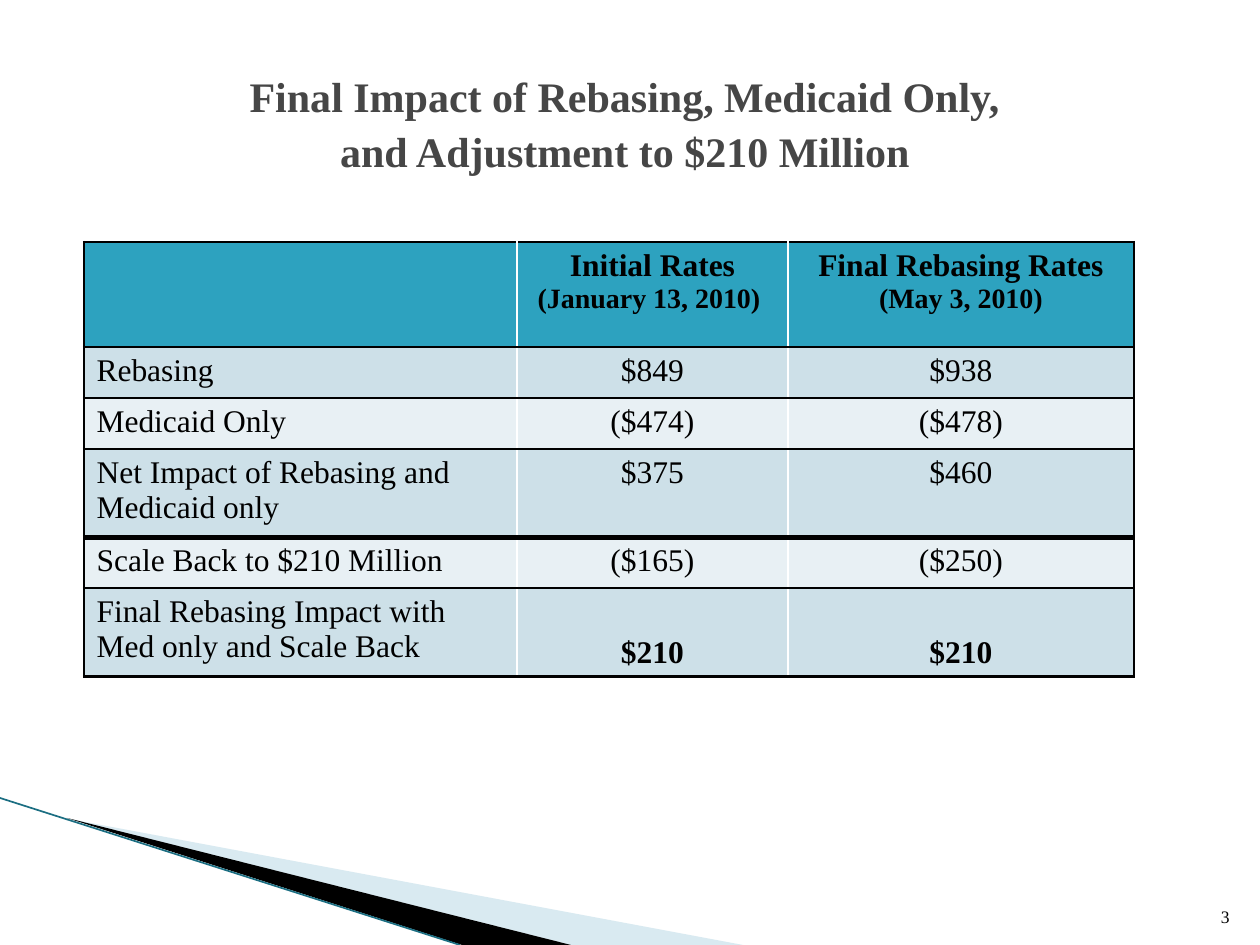
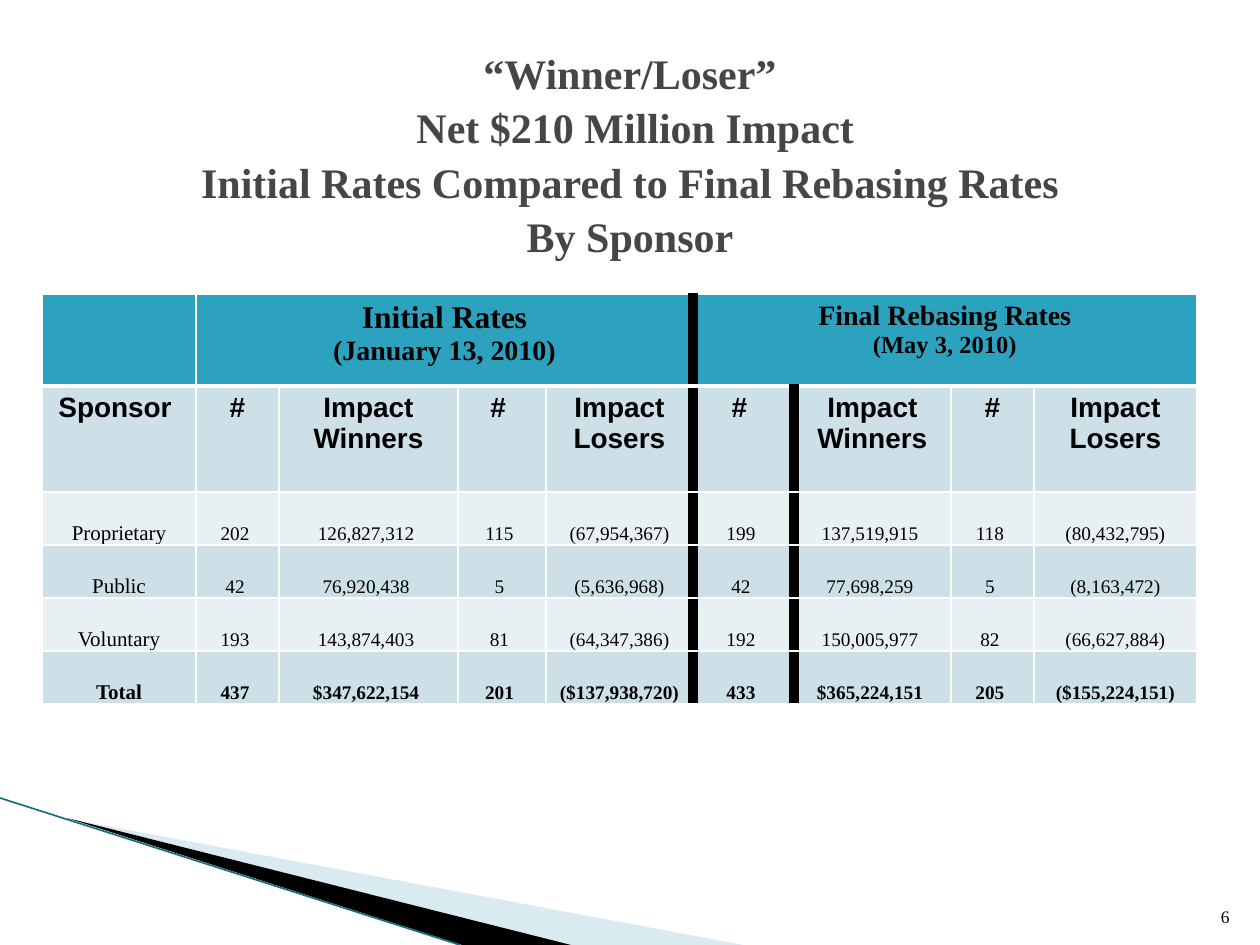
from dataclasses import dataclass

from lxml.etree import SubElement
from pptx import Presentation
from pptx.dml.color import RGBColor
from pptx.enum.shapes import MSO_CONNECTOR
from pptx.enum.text import MSO_ANCHOR, MSO_AUTO_SIZE, PP_ALIGN
from pptx.oxml.ns import qn
from pptx.util import Emu, Pt

EMU_PER_PX = 914400 / 126


@dataclass(frozen=True)
class Theme:
    """Colours, fonts and type sizes of the deck."""
    black: str = "000000"
    white: str = "FFFFFF"
    title: str = "464646"
    header: str = "2DA2BF"
    band_dark: str = "CDE0E8"
    band_light: str = "E8F0F4"
    wedge: str = "A0CBDC"
    edge: str = "1B6E82"
    serif: str = "Times New Roman"
    sans: str = "Arial"
    title_size: int = 24
    large: int = 18
    medium: int = 16
    small: int = 14
    label: int = 12
    figure: int = 11
    footer: int = 10


@dataclass(frozen=True)
class Box:
    """A region in px."""
    left: int
    top: int
    width: int
    height: int

    def emu(self):
        """Return the region as lengths for python-pptx."""
        return [px(n) for n in (self.left, self.top, self.width, self.height)]


THEME = Theme()
PAGE = Box(0, 0, 1260, 945)


def px(count):
    """Turn px into EMU."""
    return Emu(round(count * EMU_PER_PX))


def rgb(code):
    """Turn a hex code into a colour."""
    return RGBColor.from_string(code)


def add_span(para, text, size, bold=False, color=THEME.black, font=THEME.serif):
    """Add one formatted run to a paragraph."""
    span = para.add_run()
    span.text = text
    span.font.name = font
    span.font.size = Pt(size)
    span.font.bold = bold
    span.font.color.rgb = rgb(color)


def add_wedge(page, points, color, alpha=None):
    """Draw a filled outline through the given px points."""
    builder = page.shapes.build_freeform(*points[0], scale=EMU_PER_PX)
    builder.add_line_segments(points[1:], close=True)
    wedge = builder.convert_to_shape()
    wedge.shadow.inherit = False
    wedge.line.fill.background()
    wedge.fill.solid()
    wedge.fill.fore_color.rgb = rgb(color)
    if alpha:
        solid_color = wedge.fill._xPr.find(qn("a:solidFill"))[0]
        SubElement(solid_color, qn("a:alpha"), val=str(alpha * 1000))


def add_corner(page, box):
    """Draw the wedges and the edge line in the bottom left corner."""
    bottom = box.top + box.height
    left = box.left
    add_wedge(page, [(left + 69, bottom - 126), (left + 743, bottom), (left + 571, bottom)],
              THEME.wedge, alpha=40)
    add_wedge(page, [(left + 67, bottom - 127), (left + 571, bottom), (left + 462, bottom)],
              THEME.black)
    edge = page.shapes.add_connector(MSO_CONNECTOR.STRAIGHT, px(left), px(bottom - 147),
                                     px(left + 460), px(bottom))
    edge.line.color.rgb = rgb(THEME.edge)
    edge.line.width = Pt(0.95)
    SubElement(edge._element.spPr, qn("a:effectLst"))


def add_page_number(page, number, box):
    """Write the page number at the bottom right of its box."""
    frame = page.shapes.add_textbox(*box.emu()).text_frame
    frame.word_wrap = True
    frame.vertical_anchor = MSO_ANCHOR.BOTTOM
    para = frame.paragraphs[0]
    para.alignment = PP_ALIGN.RIGHT
    add_span(para, number, THEME.footer)


def set_title(page, lines, box):
    """Place and format the title placeholder."""
    title = page.shapes.title
    title.left, title.top, title.width, title.height = box.emu()
    frame = title.text_frame
    frame.word_wrap = True
    frame.auto_size = MSO_AUTO_SIZE.NONE
    frame.vertical_anchor = MSO_ANCHOR.MIDDLE
    para = frame.paragraphs[0]
    para.alignment = PP_ALIGN.CENTER
    para.line_spacing = 1.08
    for index, line in enumerate(lines):
        if index:
            para.add_line_break()
        add_span(para, line, THEME.title_size, True, THEME.title)


def add_page(deck, number, title_lines, title_top):
    """Add a page with the shared title, corner and number."""
    page = deck.slides.add_slide(deck.slide_layouts[5])
    add_corner(page, PAGE)
    set_title(page, title_lines, Box(63, title_top, 1134, 158))
    add_page_number(page, number, Box(1192, 883, 50, 50))
    return page


def add_grid(page, left, top, columns, rows):
    """Add a table with the given column widths and row heights."""
    box = Box(left, top, sum(columns), sum(rows))
    grid = page.shapes.add_table(len(rows), len(columns), *box.emu()).table
    grid.first_row = grid.horz_banding = False
    for column, width in zip(grid.columns, columns):
        column.width = px(width)
    for row, height in zip(grid.rows, rows):
        row.height = px(height)
    return grid


def paint_cell(cell, row, borders):
    """Set the borders (left, right, top, bottom) and the band fill of a cell."""
    properties = cell._tc.get_or_add_tcPr()
    for side, (color, width) in zip("LRTB", borders):
        line = SubElement(properties, qn(f"a:ln{side}"), w=str(Pt(width)))
        fill = SubElement(line, qn("a:solidFill"))
        SubElement(fill, qn("a:srgbClr"), val=color)
    band = THEME.band_dark if row % 2 else THEME.band_light
    cell.fill.solid()
    cell.fill.fore_color.rgb = rgb(band if row else THEME.header)


def write_cell(cell, lines, bold=False, font=THEME.serif, align=PP_ALIGN.CENTER,
               anchor=MSO_ANCHOR.TOP):
    """Write (text, size) lines into a cell, one paragraph each."""
    cell.vertical_anchor = anchor
    frame = cell.text_frame
    for index, (text, size) in enumerate(lines):
        para = frame.add_paragraph() if index else frame.paragraphs[0]
        para.alignment = align
        add_span(para, text, size, bold, font=font)


def add_impact_table(page, left, top):
    """Build the table of rebasing impact in millions."""
    headings = {
        1: [("Initial Rates", THEME.large), ("(January 13, 2010) ", THEME.medium)],
        2: [("Final Rebasing Rates", THEME.large), ("(May 3, 2010)", THEME.medium)],
    }
    records = [
        ("Rebasing", "$849", "$938"),
        ("Medicaid Only", "($474)", "($478)"),
        ("Net Impact of Rebasing and Medicaid only", "$375", "$460"),
        ("Scale Back to $210 Million", "($165)", "($250)"),
        ("Final Rebasing Impact with Med only and Scale Back", "$210", "$210"),
    ]
    grid = add_grid(page, left, top, [433, 271, 346], [105, 51, 51, 82, 51, 82])
    outer, inner = (THEME.black, 1.5), (THEME.white, 1)
    verticals = [outer, inner, inner, outer]
    horizontals = [(THEME.black, width) for width in (1.5, 1.5, 1, 1, 3, 1, 1.5)]
    for row in range(6):
        for column in range(3):
            paint_cell(grid.cell(row, column), row,
                       verticals[column:column + 2] + horizontals[row:row + 2])
    for column, lines in headings.items():
        write_cell(grid.cell(0, column), lines, bold=True)
    for row, record in enumerate(records, 1):
        for column, text in enumerate(record):
            is_result = row == len(records) and column > 0
            write_cell(grid.cell(row, column), [(text, THEME.large)], bold=is_result,
                       align=PP_ALIGN.CENTER if column else PP_ALIGN.LEFT,
                       anchor=MSO_ANCHOR.BOTTOM if is_result else MSO_ANCHOR.TOP)


def add_sponsor_table(page, left, top):
    """Build the table of winners and losers by sponsor."""
    groups = {
        1: [("Initial Rates", THEME.large), ("(January 13, 2010)", THEME.medium)],
        5: [("Final Rebasing Rates", THEME.medium), ("(May 3, 2010)", THEME.small)],
    }
    headings = ["Sponsor ", "#", "Impact Winners", "# ", "Impact Losers",
                "# ", "Impact Winners", "#", "Impact Losers"]
    records = [
        ("Proprietary", "202 ", "126,827,312 ", "115 ", "(67,954,367)",
         "199 ", "137,519,915 ", "118 ", "(80,432,795)"),
        ("Public", "42 ", "76,920,438 ", "5 ", "(5,636,968)",
         "42 ", "77,698,259 ", "5 ", "(8,163,472)"),
        ("Voluntary", "193 ", "143,874,403 ", "81 ", "(64,347,386)",
         "192 ", "150,005,977 ", "82 ", "(66,627,884)"),
        ("Total", "437 ", "$347,622,154 ", "201 ", "($137,938,720)",
         "433 ", "$365,224,151 ", "205 ", "($155,224,151)"),
    ]
    grid = add_grid(page, left, top, [154, 83, 179, 88, 147, 101, 157, 83, 163],
                    [92, 106] + [53] * len(records))
    thin, thick, bar = (THEME.white, 1), (THEME.white, 3), (THEME.black, 6)
    horizontals = [thin, thick] + [thin] * 5
    for row in range(6):
        bars = (5, 6) if row else (5,)
        verticals = [bar if edge in bars else thin for edge in range(10)]
        for column in range(9):
            paint_cell(grid.cell(row, column), row,
                       verticals[column:column + 2] + horizontals[row:row + 2])
    for column, lines in groups.items():
        grid.cell(0, column).merge(grid.cell(0, column + 3))
        write_cell(grid.cell(0, column), lines, bold=True)
    for column, text in enumerate(headings):
        write_cell(grid.cell(1, column), [(text, THEME.medium)], bold=True, font=THEME.sans)
    for row, record in enumerate(records, 2):
        for column, text in enumerate(record):
            cell = grid.cell(row, column)
            cell.margin_left = cell.margin_right = cell.margin_top = px(1)
            cell.margin_bottom = 0
            write_cell(cell, [(text, THEME.figure if column else THEME.label)],
                       bold=record[0] == "Total", anchor=MSO_ANCHOR.BOTTOM)


def main():
    """Build and save the deck."""
    deck = Presentation()
    deck.slide_width, deck.slide_height = px(PAGE.width), px(PAGE.height)
    impact = add_page(deck, "3", ["Final Impact of Rebasing, Medicaid Only, ",
                                  "and Adjustment to $210 Million "], 42)
    add_impact_table(impact, 84, 242)
    sponsors = add_page(deck, "6", ["“Winner/Loser”", " Net $210 Million Impact",
                                    "Initial Rates Compared to Final Rebasing Rates",
                                    "By Sponsor"], 73)
    add_sponsor_table(sponsors, 42, 294)
    deck.save("out.pptx")


if __name__ == "__main__":
    main()
